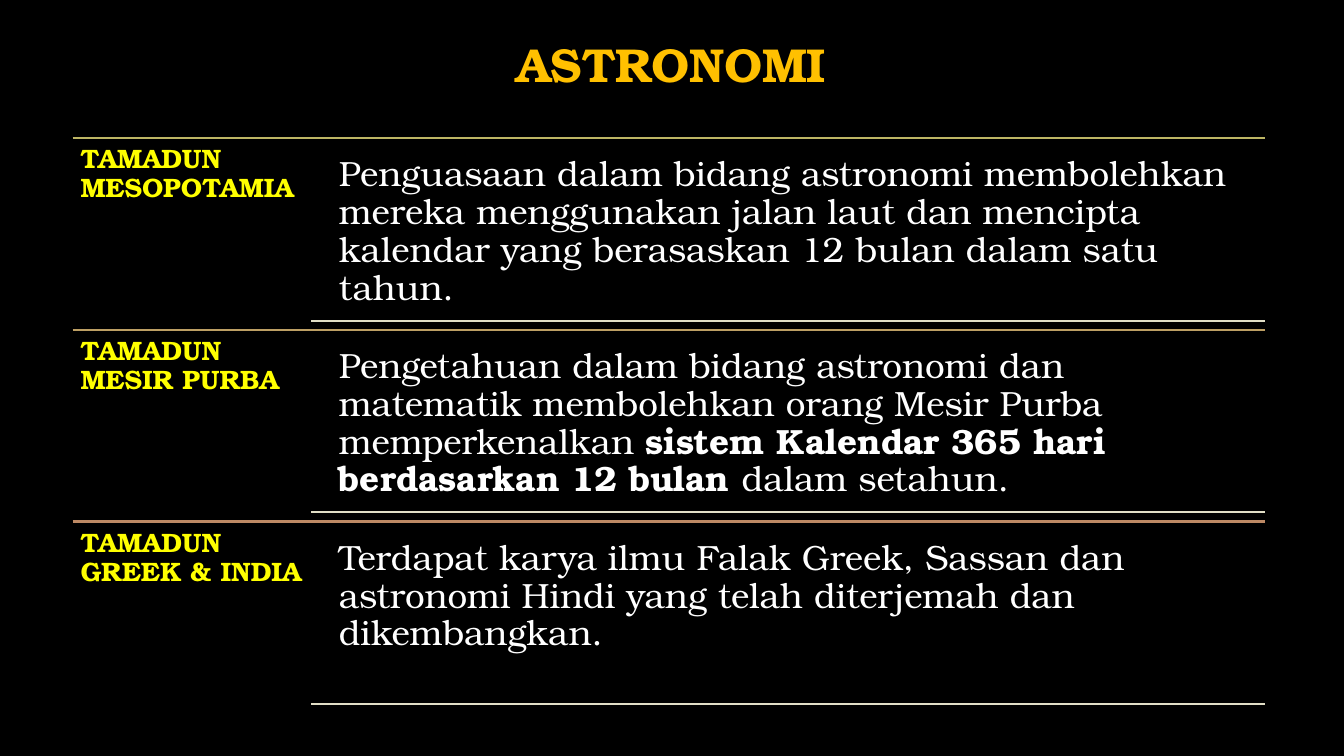
from dataclasses import dataclass

import pptx
import pptx.dml.color
import pptx.enum.shapes
import pptx.enum.text
import pptx.oxml.xmlchemy
import pptx.slide
import pptx.util

Cm = pptx.util.Cm
Pt = pptx.util.Pt
Anchor = pptx.enum.text.MSO_ANCHOR
Align = pptx.enum.text.PP_ALIGN

FONT = "TeX Gyre Bonum"
LEFT, RIGHT = 1.83, 31.88
FIRST_TOP, ROW_PITCH = 3.48, 4.83
DETAIL_OFFSET, DETAIL_HEIGHT = 0.22, 4.38


@dataclass(frozen=True)
class Style:
    size: float
    color: str
    inset: float
    bold: bool = False
    space_after: float = 0
    align: Align = Align.LEFT
    anchor: Anchor = Anchor.TOP


@dataclass(frozen=True)
class Phrase:
    text: str
    bold: bool = False


@dataclass(frozen=True)
class Civilization:
    name: str
    rule_color: str
    achievement: tuple[Phrase, ...]


TITLE = Style(34, "FFC000", 0.25, bold=True, align=Align.CENTER, anchor=Anchor.MIDDLE)
NAME = Style(19, "FFFF00", 0.2, bold=True, space_after=6.5)
ACHIEVEMENT = Style(25, "FFFFFF", 0.25, space_after=9)

CIVILIZATIONS = (
    Civilization("TAMADUN MESOPOTAMIA", "BDB564", (
        Phrase("Penguasaan dalam bidang astronomi membolehkan mereka menggunakan "
               "jalan laut dan mencipta kalendar yang berasaskan 12 bulan dalam "
               "satu tahun."),
    )),
    Civilization("TAMADUN MESIR PURBA", "BD9F64", (
        Phrase("Pengetahuan dalam bidang astronomi dan matematik membolehkan "
               "orang Mesir Purba memperkenalkan "),
        Phrase("sistem Kalendar 365 hari berdasarkan 12 bulan ", bold=True),
        Phrase("dalam setahun."),
    )),
    Civilization("TAMADUN GREEK & INDIA", "BD8964", (
        Phrase("Terdapat karya ilmu Falak Greek, Sassan dan astronomi Hindi yang "
               "telah diterjemah dan dikembangkan."),
    )),
)


def rgb(value: str) -> pptx.dml.color.RGBColor:
    return pptx.dml.color.RGBColor.from_string(value)


def add_text(slide: pptx.slide.Slide, left: float, top: float, width: float,
             height: float, phrases: tuple[Phrase, ...], style: Style) -> None:
    box = slide.shapes.add_textbox(Cm(left), Cm(top), Cm(width), Cm(height))
    frame = box.text_frame
    frame.word_wrap = True
    frame.vertical_anchor = style.anchor
    frame.margin_left = frame.margin_right = Cm(style.inset)
    frame.margin_top = frame.margin_bottom = Cm(style.inset)
    paragraph = frame.paragraphs[0]
    paragraph.alignment = style.align
    paragraph.line_spacing = 0.9
    paragraph.space_after = Pt(style.space_after)
    for phrase in phrases:
        run = paragraph.add_run()
        run.text = phrase.text
        run.font.name = FONT
        run.font.size = Pt(style.size)
        run.font.bold = style.bold or phrase.bold
        run.font.color.rgb = rgb(style.color)


def add_rule(slide: pptx.slide.Slide, left: float, y: float, color: str) -> None:
    rule = slide.shapes.add_connector(
        pptx.enum.shapes.MSO_CONNECTOR.STRAIGHT, Cm(left), Cm(y), Cm(RIGHT), Cm(y))
    rule.line.color.rgb = rgb(color)
    rule.line.width = Pt(1.5)
    properties = rule._element.spPr
    properties.append(pptx.oxml.xmlchemy.OxmlElement("a:effectLst"))


def add_civilization(slide: pptx.slide.Slide, top: float, entry: Civilization) -> None:
    detail_top = top + DETAIL_OFFSET
    add_rule(slide, LEFT, top, entry.rule_color)
    add_text(slide, LEFT, top, 6.01, ROW_PITCH, (Phrase(entry.name),), NAME)
    add_text(slide, 8.29, detail_top, 23.57, DETAIL_HEIGHT, entry.achievement, ACHIEVEMENT)
    add_rule(slide, 7.85, detail_top + DETAIL_HEIGHT, "E1DEC6")


def main() -> None:
    deck = pptx.Presentation()
    deck.slide_width, deck.slide_height = Cm(33.87), Cm(19.05)
    slide = deck.slides.add_slide(deck.slide_layouts[6])

    # Background
    slide.background.fill.solid()
    slide.background.fill.fore_color.rgb = rgb("000000")

    # Title
    add_text(slide, 2.54, 0.43, 28.75, 2.51, (Phrase("ASTRONOMI"),), TITLE)

    # One ruled row per civilization
    for row, entry in enumerate(CIVILIZATIONS):
        add_civilization(slide, FIRST_TOP + row * ROW_PITCH, entry)

    deck.save("out.pptx")


if __name__ == "__main__":
    main()
